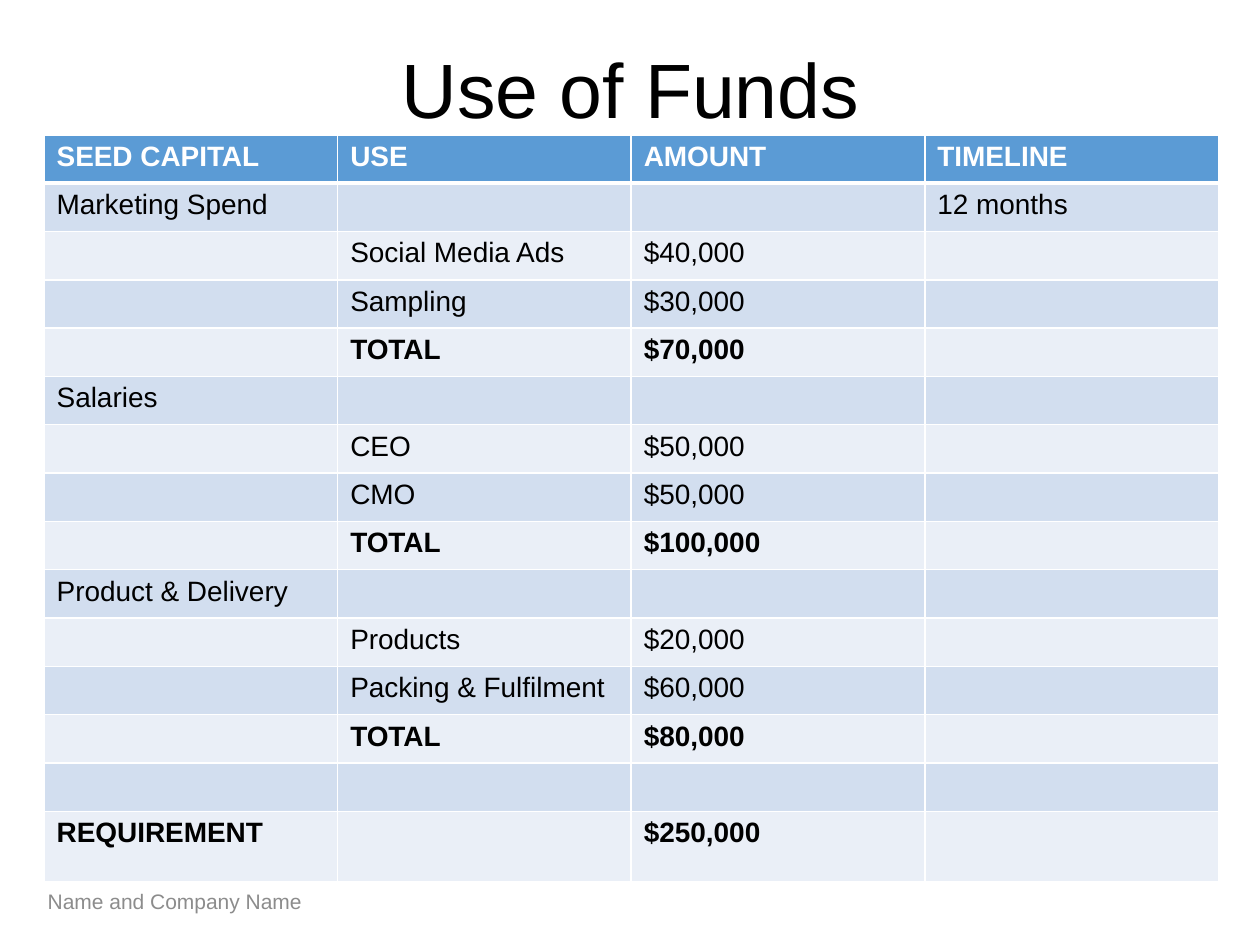
from lxml import etree
from pptx import Presentation
from pptx.dml.color import RGBColor
from pptx.enum.text import MSO_ANCHOR, PP_ALIGN
from pptx.oxml.ns import qn
from pptx.util import Inches, Pt

MIDDLE = MSO_ANCHOR.MIDDLE
CENTER = PP_ALIGN.CENTER

BLACK = RGBColor(0x00, 0x00, 0x00)
WHITE = RGBColor(0xFF, 0xFF, 0xFF)
GRAY = RGBColor(0x8C, 0x8C, 0x8C)
HEADER_BLUE = RGBColor(0x5B, 0x9B, 0xD5)
BANDS = (RGBColor(0xD2, 0xDE, 0xEF), RGBColor(0xEA, 0xEF, 0xF7))

FONT = "Arial"
TITLE_SIZE, CELL_SIZE, FOOTER_SIZE = 44, 16, 12
TITLE_ONLY = 5

# Table grid in inches
LEFT, TOP, WIDTH, HEIGHT = 0.35, 1.07, 9.32, 5.93
LAST_ROW = 0.56
THIN, THICK = 1, 3

HEADINGS = ("SEED CAPITAL", "USE", "AMOUNT", "TIMELINE")
# Section, timeline, items, section total
SECTIONS = (
    ("Marketing Spend", "12 months",
     (("Social Media Ads", "$40,000"), ("Sampling", "$30,000")), "$70,000"),
    ("Salaries", "",
     (("CEO", "$50,000"), ("CMO", "$50,000")), "$100,000"),
    ("Product & Delivery", "",
     (("Products", "$20,000"), ("Packing & Fulfilment", "$60,000")), "$80,000"),
)


def budget_rows():
    """Return (cell texts, bold) for every table row."""
    rows = [(HEADINGS, True)]
    for section, timeline, items, total in SECTIONS:
        rows.append(((section, "", "", timeline), False))
        rows += [(("", use, amount, ""), False) for use, amount in items]
        rows.append((("", "TOTAL", total, ""), True))
    rows.append((("", "", "", ""), False))
    rows.append((("REQUIREMENT", "", "$250,000", ""), True))
    return rows


def add_span(para, text, size, color, bold=False):
    span = para.add_run()
    span.text = text
    span.font.name = FONT
    span.font.size = Pt(size)
    span.font.bold = bold
    span.font.color.rgb = color


def set_borders(cell, top, bottom):
    properties = cell._tc.get_or_add_tcPr()
    sides = (("lnL", THIN), ("lnR", THIN), ("lnT", top), ("lnB", bottom))
    for index, (side, width) in enumerate(sides):
        line = etree.Element(qn(f"a:{side}"), w=str(Pt(width)))
        fill = etree.SubElement(line, qn("a:solidFill"))
        etree.SubElement(fill, qn("a:srgbClr"), val=str(WHITE))
        properties.insert(index, line)


def fill_cell(cell, text, fill, color, bold):
    cell.fill.solid()
    cell.fill.fore_color.rgb = fill
    para = cell.text_frame.paragraphs[0]
    if text:
        add_span(para, text, CELL_SIZE, color, bold)
    else:
        # Keeps an empty cell as low as a filled one
        etree.SubElement(para._p, qn("a:endParaRPr"), sz=str(CELL_SIZE * 100))


def add_budget_table(page):
    rows = budget_rows()
    columns = len(HEADINGS)
    table = page.shapes.add_table(
        len(rows), columns,
        Inches(LEFT), Inches(TOP), Inches(WIDTH), Inches(HEIGHT)).table
    for column in table.columns:
        column.width = Inches(WIDTH / columns)
    for row in table.rows:
        row.height = Inches((HEIGHT - LAST_ROW) / (len(rows) - 1))
    table.rows[len(rows) - 1].height = Inches(LAST_ROW)

    for r, (texts, bold) in enumerate(rows):
        fill = BANDS[(r - 1) % 2] if r else HEADER_BLUE
        color = BLACK if r else WHITE
        top = THICK if r == 1 else THIN
        bottom = THICK if r == 0 else THIN
        for c, text in enumerate(texts):
            cell = table.cell(r, c)
            fill_cell(cell, text, fill, color, bold)
            set_borders(cell, top, bottom)


def add_footer(page, text):
    box = page.shapes.add_textbox(
        Inches(0.28), Inches(6.95), Inches(8.22), Inches(0.4))
    frame = box.text_frame
    frame.word_wrap = True
    frame.vertical_anchor = MIDDLE
    add_span(frame.paragraphs[0], text, FOOTER_SIZE, GRAY)


def set_title(page, text):
    title = page.shapes.title
    title.left, title.top = Inches(0.69), Inches(0)
    title.width, title.height = Inches(8.63), Inches(1.48)
    title.text_frame.vertical_anchor = MIDDLE
    para = title.text_frame.paragraphs[0]
    para.alignment = CENTER
    para.line_spacing = 0.9
    add_span(para, text, TITLE_SIZE, BLACK)
    # Bring the title in front of the table
    title.element.getparent().append(title.element)


def main():
    deck = Presentation()
    deck.slide_width, deck.slide_height = Inches(10), Inches(7.5)
    page = deck.slides.add_slide(deck.slide_layouts[TITLE_ONLY])
    add_footer(page, "Name and Company Name")
    add_budget_table(page)
    set_title(page, "Use of Funds")
    deck.save("out.pptx")


if __name__ == "__main__":
    main()
